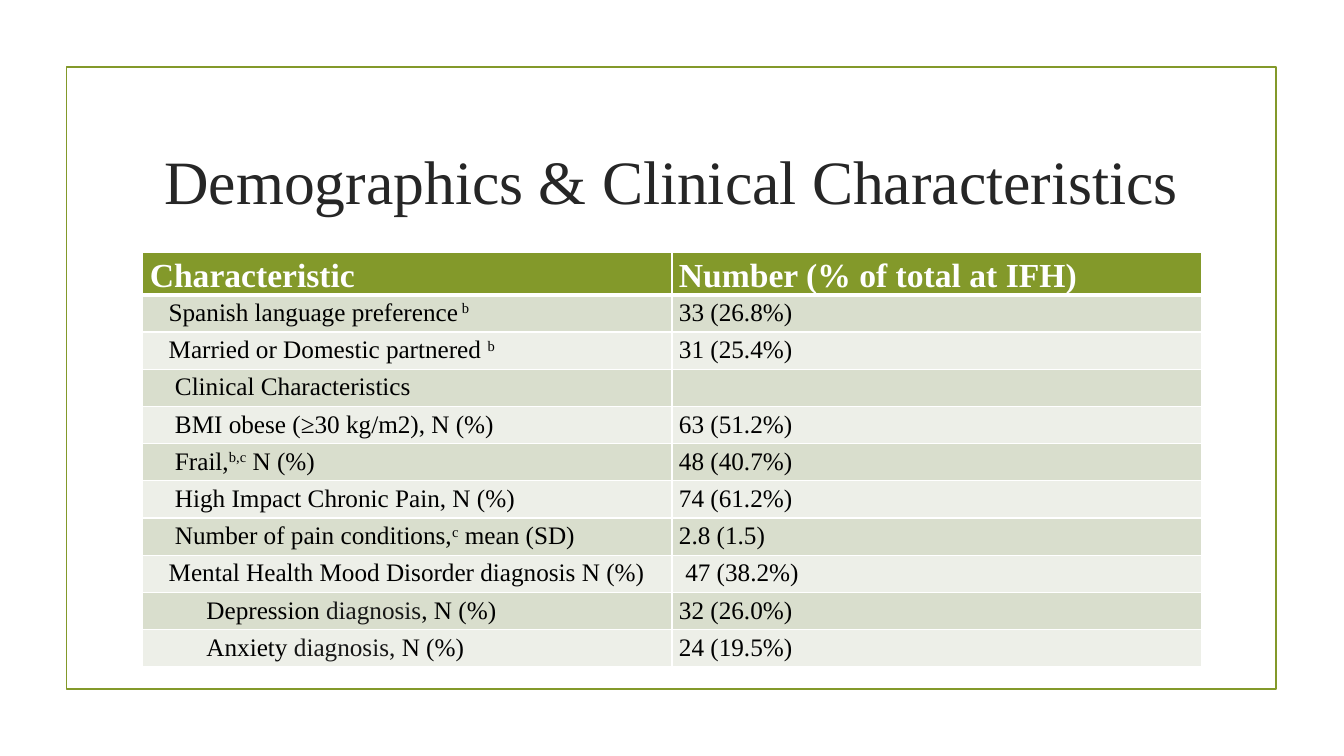
from dataclasses import dataclass

from lxml.etree import SubElement
from pptx import Presentation
from pptx.dml.color import RGBColor
from pptx.enum.shapes import MSO_SHAPE
from pptx.enum.text import MSO_ANCHOR, PP_ALIGN
from pptx.oxml.ns import qn
from pptx.util import Pt


@dataclass(frozen=True)
class Theme:
    font: str = "Times New Roman"
    green: str = "83992A"
    bands: tuple = ("D9DECD", "EDEFE8")
    white: str = "FFFFFF"
    black: str = "000000"
    soft_black: str = "171717"
    title_color: str = "262626"
    title_size: int = 44
    header_size: int = 24
    body_size: int = 18


theme = Theme()


def style_run(run, size, color, bold=False):
    run.font.name = theme.font
    run.font.size = Pt(size)
    run.font.bold = bold
    run.font.color.rgb = RGBColor.from_string(color)


def add_border(cell, side, width):
    line = SubElement(cell._tc.get_or_add_tcPr(), qn(f"a:ln{side}"), w=str(Pt(width)))
    fill = SubElement(line, qn("a:solidFill"))
    SubElement(fill, qn("a:srgbClr"), val=theme.white)


# Rows: label indent, label parts as (text, style), value, value indent
rows = [
    (0, [("Characteristic", "")], "Number (% of total at IFH)", 0),
    (13.5, [("Spanish language preference", ""), (" b", "super")], "33 (26.8%)", 0),
    (13.5, [("Married or Domestic partnered ", ""), ("b", "super")], "31 (25.4%)", 0),
    (18, [("Clinical Characteristics", "")], "", 0),
    (18, [("BMI obese (≥30 kg/m2), N (%)", "")], "63 (51.2%)", 0),
    (18, [("Frail,", ""), ("b,c", "super"), (" N (%)", "")], "48 (40.7%)", 0),
    (18, [("High Impact Chronic Pain, N (%)", "")], "74 (61.2%)", 0),
    (18, [("Number of pain conditions,", ""), ("c", "super"), (" mean (SD)", "")], "2.8 (1.5)", 0),
    (13.5, [("Mental Health Mood Disorder diagnosis N (%)", "")], "47 (38.2%)", 4.5),
    (40.5, [("Depression", ""), (" diagnosis", "soft"), (", N (%)", "")], "32 (26.0%)", 0),
    (40.5, [("Anxiety ", ""), ("diagnosis, ", "soft"), ("N (%)", "")], "24 (19.5%)", 0),
]

deck = Presentation()
deck.slide_width, deck.slide_height = Pt(960), Pt(540)
page = deck.slides.add_slide(deck.slide_layouts[5])

# Frame
frame = page.shapes.add_shape(MSO_SHAPE.RECTANGLE, Pt(47.6), Pt(48), Pt(864), Pt(444))
frame.shadow.inherit = False
frame.fill.background()
frame.line.color.rgb = RGBColor.from_string(theme.green)
frame.line.width = Pt(1.25)

# Title
title = page.shapes.title
title.left, title.top, title.width, title.height = Pt(102), Pt(77), Pt(756), Pt(103)
title.text_frame.text = "Demographics & Clinical Characteristics"
title.text_frame.word_wrap = True
title.text_frame.vertical_anchor = MSO_ANCHOR.MIDDLE
title.text_frame.paragraphs[0].alignment = PP_ALIGN.CENTER
style_run(title.text_frame.paragraphs[0].runs[0], theme.title_size, theme.title_color)

# Table
header_height, row_height = 28.4, 26.6
table = page.shapes.add_table(len(rows), 2, Pt(102), Pt(180), Pt(756),
                              Pt(header_height + row_height * (len(rows) - 1))).table
for column in table.columns:
    column.width = Pt(378)

for row_index, (label_indent, label, value, value_indent) in enumerate(rows):
    is_header = row_index == 0
    table.rows[row_index].height = Pt(header_height if is_header else row_height)
    size = theme.header_size if is_header else theme.body_size
    base_color = theme.white if is_header else theme.black
    background = theme.green if is_header else theme.bands[(row_index - 1) % 2]
    contents = [(label_indent, label), (value_indent, [(value, "")])]

    for column_index, (indent, parts) in enumerate(contents):
        cell = table.cell(row_index, column_index)
        cell.margin_left = cell.margin_right = Pt(5)
        cell.margin_top = cell.margin_bottom = 0
        for side in "LRTB":
            thick = (is_header and side == "B") or (row_index == 1 and side == "T")
            add_border(cell, side, 3 if thick else 1)
        cell.fill.solid()
        cell.fill.fore_color.rgb = RGBColor.from_string(background)

        para = cell.text_frame.paragraphs[0]
        para.line_spacing = 1.15
        para.space_after = Pt(8)
        para.font.size = Pt(size)
        if indent:
            para._p.get_or_add_pPr().set("marL", str(Pt(indent)))
        for text, style in parts:
            if not text:
                continue
            run = para.add_run()
            run.text = text
            style_run(run, size, theme.soft_black if style == "soft" else base_color, is_header)
            if style == "super":
                run.font._element.set("baseline", "30000")

deck.save("out.pptx")
